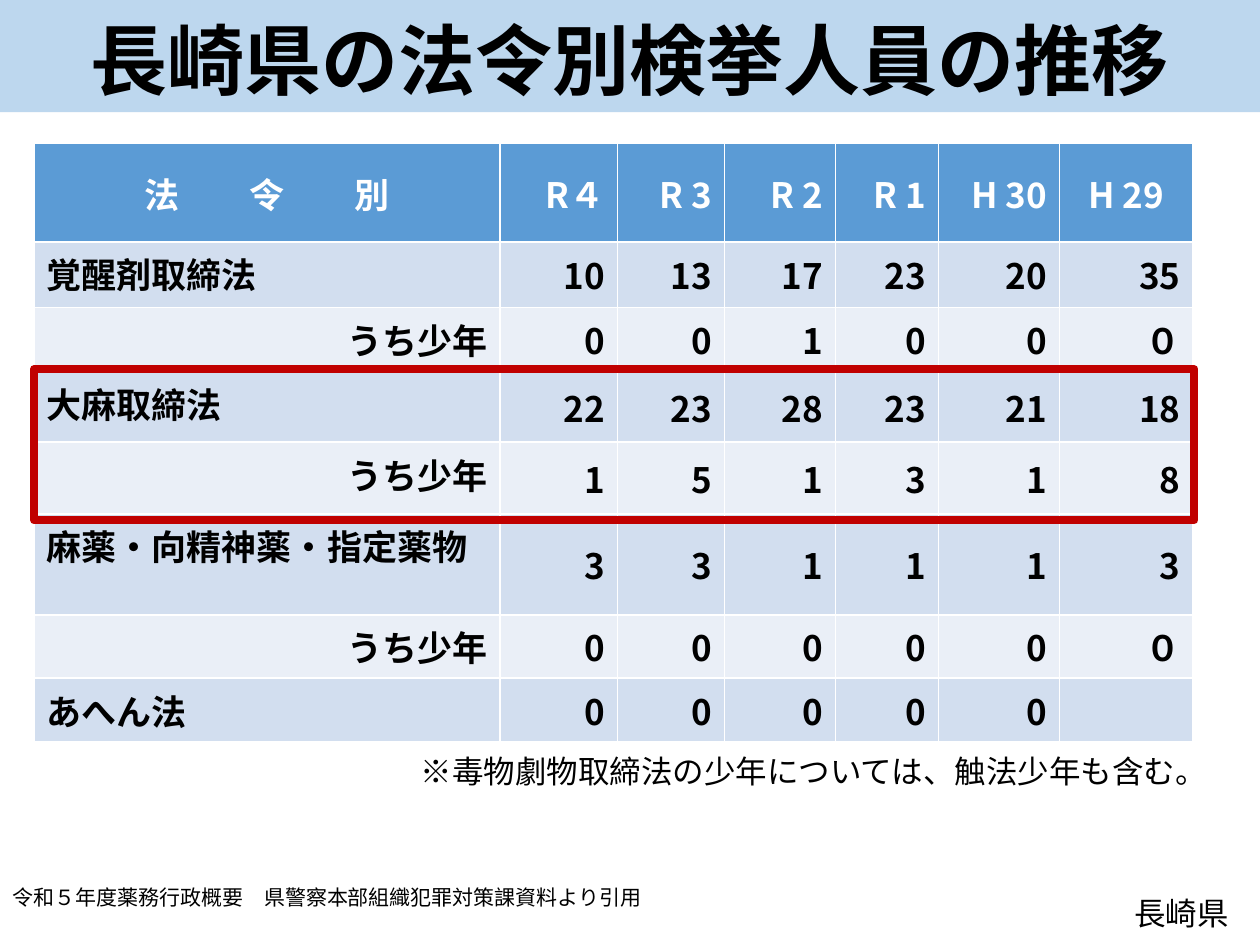
from lxml.etree import SubElement
from pptx import Presentation
from pptx.dml.color import RGBColor
from pptx.enum.shapes import MSO_SHAPE as Shape
from pptx.enum.text import MSO_ANCHOR as Anchor, MSO_AUTO_SIZE as Fit, PP_ALIGN as Align
from pptx.oxml.ns import qn
from pptx.util import Inches, Pt

FONT = "Noto Sans CJK JP"
COLORS = {
    "black": "000000",
    "white": "FFFFFF",
    "title": "BDD7EE",
    "head": "5B9BD5",
    "dark": "D2DEEF",
    "light": "EAEFF7",
    "frame": "C00000",
}
SUB = "うち少年"
WIDTHS = [3.7, 0.93, 0.85, 0.88, 0.82, 0.96, 1.06]
HEIGHTS = [0.78, 0.52, 0.51, 0.56, 0.57, 0.8, 0.49, 0.5]
ROWS = [
    ["法　　令　　別", "R４", "R 3", "R 2", "R 1", "H 30", "H 29"],
    ["覚醒剤取締法", "10", "13", "17", "23", "20", "35"],
    [SUB, "0", "0", "1", "0", "0", "０"],
    ["大麻取締法", "22", "23", "28", "23", "21", "18"],
    [SUB, "1", "5", "1", "3", "1", "8"],
    ["麻薬・向精神薬・指定薬物", "3", "3", "1", "1", "1", "3"],
    [SUB, "0", "0", "0", "0", "0", "０"],
    ["あへん法", "0", "0", "0", "0", "0", ""],
]


def color(name):
    return RGBColor.from_string(COLORS[name])


def paint(item, name):
    item.fill.solid()
    item.fill.fore_color.rgb = color(name)


def add_run(para, text, size, tint="black", bold=False):
    run = para.add_run()
    run.text = text
    font = run.font
    font.size, font.bold, font.name = Pt(size), bold, FONT
    font.color.rgb = color(tint)
    # East Asian glyphs take their own typeface entry
    SubElement(run._r.get_or_add_rPr(), qn("a:ea"), typeface=FONT)


def add_rect(slide, *box):
    rect = slide.shapes.add_shape(Shape.RECTANGLE, *map(Inches, box))
    rect.shadow.inherit = False
    return rect


def add_title(slide, text):
    bar = add_rect(slide, 0, 0, 10, 0.89)
    paint(bar, "title")
    bar.line.fill.background()
    frame = bar.text_frame
    frame.word_wrap = True
    frame.vertical_anchor = Anchor.BOTTOM
    para = frame.paragraphs[0]
    para.alignment = Align.CENTER
    para.line_spacing = 0.9
    add_run(para, text, 44, bold=True)


def add_frame(slide, *box):
    rect = add_rect(slide, *box)
    rect.fill.background()
    rect.line.color.rgb = color("frame")
    rect.line.width = Pt(4.5)


def add_note(slide, box, text, size, align=Align.LEFT, wrap=True):
    frame = slide.shapes.add_textbox(*map(Inches, box)).text_frame
    frame.word_wrap = wrap
    frame.auto_size = Fit.SHAPE_TO_FIT_TEXT
    para = frame.paragraphs[0]
    para.alignment = align
    add_run(para, text, size)


def cell_align(row, col, text):
    if row == 0 and col in (0, len(WIDTHS) - 1):
        return Align.CENTER
    if col == 0 and text != SUB:
        return Align.LEFT
    return Align.RIGHT


def fill_cell(cell, row, col, text):
    paint(cell, "head" if row == 0 else "dark" if row % 2 else "light")
    cell.margin_left = cell.margin_right = Inches(0.1)
    cell.margin_top = cell.margin_bottom = Inches(0.05)
    cell.vertical_anchor = Anchor.TOP if row and col == 0 else Anchor.MIDDLE
    if text:
        para = cell.text_frame.paragraphs[0]
        para.alignment = cell_align(row, col, text)
        add_run(para, text, 20, "black" if row else "white", True)


def add_grid(slide, left, top):
    box = map(Inches, (left, top, sum(WIDTHS), sum(HEIGHTS)))
    grid = slide.shapes.add_table(len(ROWS), len(WIDTHS), *box).table
    for col, width in zip(grid.columns, WIDTHS):
        col.width = Inches(width)
    for row, height in zip(grid.rows, HEIGHTS):
        row.height = Inches(height)
    for r, texts in enumerate(ROWS):
        for c, text in enumerate(texts):
            fill_cell(grid.cell(r, c), r, c, text)


def main():
    deck = Presentation()
    deck.slide_width, deck.slide_height = Inches(10), Inches(7.5)
    slide = deck.slides.add_slide(deck.slide_layouts[6])

    # Arrests by law and year
    add_grid(slide, 0.27, 1.14)

    # Title bar, and frame round the cannabis rows
    add_title(slide, "長崎県の法令別検挙人員の推移")
    add_frame(slide, 0.27, 2.93, 9.21, 1.2)

    # Remark, source and prefecture
    add_note(slide, (3.24, 5.92, 6.51, 0.4),
             "※毒物劇物取締法の少年については、触法少年も含む。", 18, wrap=False)
    add_note(slide, (0, 6.97, 5.54, 0.3),
             "令和５年度薬務行政概要　県警察本部組織犯罪対策課資料より引用", 12)
    add_note(slide, (8.72, 7.05, 1.31, 0.4), "長崎県", 18, Align.CENTER)

    deck.save("out.pptx")


if __name__ == "__main__":
    main()
